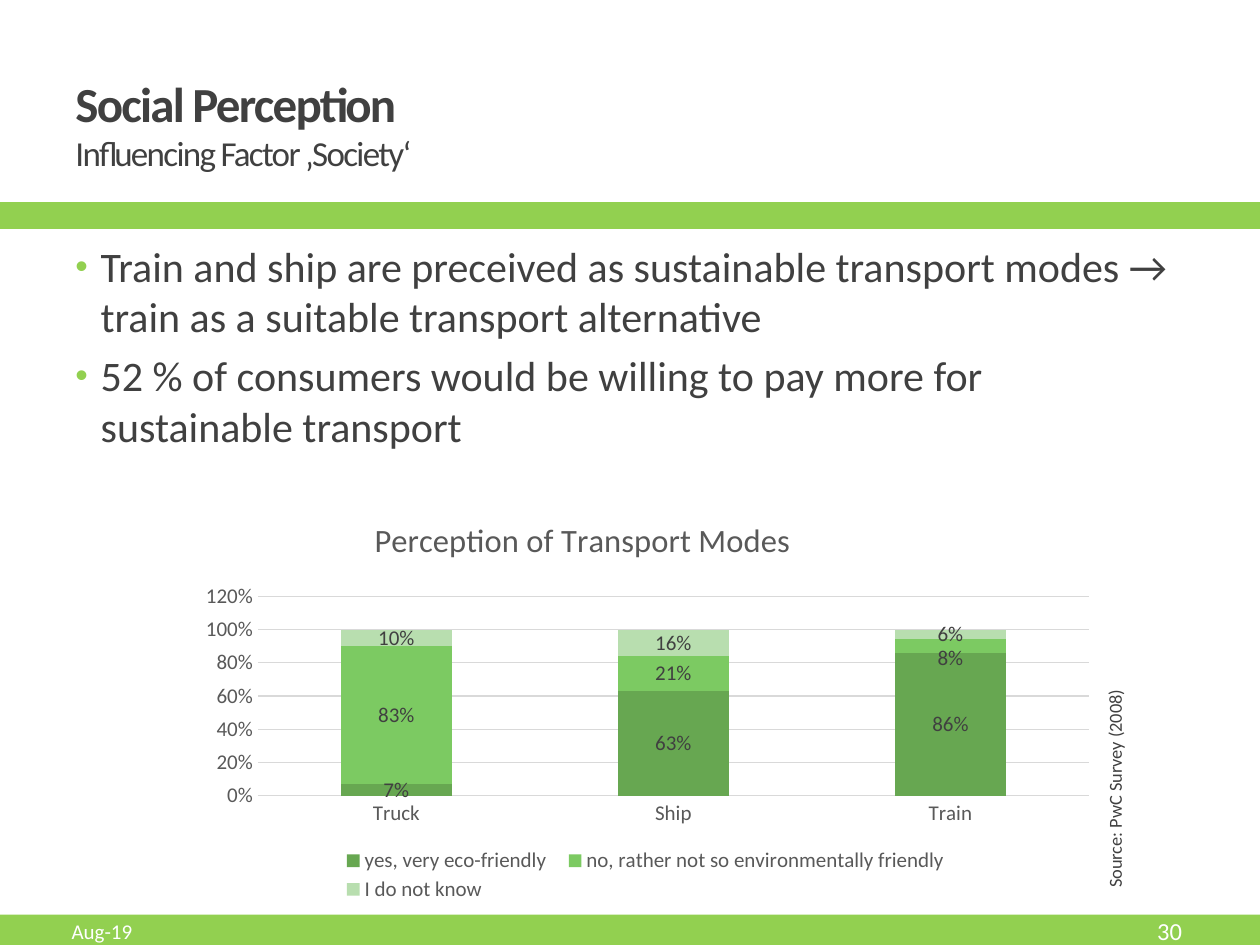
"""Build the Social Perception slide with its bullets and stacked column chart."""
import pptx
import pptx.chart.data
import pptx.dml.color
import pptx.enum.chart
import pptx.enum.shapes
import pptx.enum.text
import pptx.oxml
import pptx.oxml.ns
import pptx.util
from lxml import etree

FONT = "Calibri"
HUES = {"band": "92D050", "text": "404040", "soft": "595959", "grid": "D9D9D9", "white": "FFFFFF"}
COLS, ROWS = 100, 75
WIDE, HIGH = pptx.util.Inches(10), pptx.util.Inches(7.5)

BANDS = [((-0.4, 72.6, 101.6, 5), 0), ((0, 16.2, 101.2, 1.8), 2)]
TITLE = "Social Perception"
TOPIC = "Influencing Factor ‚Society‘"
POINTS = [
    "Train and ship are preceived as sustainable transport modes → train as a suitable transport alternative",
    "52 % of consumers would be willing to pay more for sustainable transport",
]
NOTES = [
    ("Aug-19", (4.7, 72.1, 31.7, 3.6), {"size": 12, "hue": "white"}),
    ("30", (83.1, 72.1, 11.7, 3.6), {"size": 14, "hue": "white", "align": "RIGHT"}),
    ("Source: PwC Survey (2008)", (77, 58.6, 22.9, 2.8), {"size": 10.5, "turn": 270}),
]
HEAD = "Perception of Transport Modes"
MODES = ["Truck", "Ship", "Train"]
VIEWS = [
    ("yes, very eco-friendly", "67A751", (0.07, 0.63, 0.86)),
    ("no, rather not so environmentally friendly", "7CCA62", (0.83, 0.21, 0.08)),
    ("I do not know", "B8DEAF", (0.1, 0.16, 0.06)),
]
SHIFT = {"view": 1, "mode": 2, "drop": 0.03}


def color(hue):
    return pptx.dml.color.RGBColor.from_string(HUES.get(hue, hue))


def place(box):
    """Turn grid columns and rows into slide lengths."""
    return [round(part * unit) for part, unit in zip(box, (WIDE / COLS, HIGH / ROWS) * 2)]


def style(font, size, hue="text", bold=False):
    font.name, font.size, font.bold = FONT, pptx.util.Pt(size), bold
    font.color.rgb = color(hue)


def write(slide, text, box, size=24, hue="text", align="LEFT", anchor="MIDDLE", turn=0, bullet=False):
    """Add a text box; each item of text is a paragraph of (words, size, bold) lines."""
    shape = slide.shapes.add_textbox(*place(box))
    shape.rotation = turn
    frame = shape.text_frame
    frame.word_wrap = True
    frame.vertical_anchor = pptx.enum.text.MSO_ANCHOR[anchor]
    for num, lines in enumerate([text] if isinstance(text, str) else text):
        para = frame.add_paragraph() if num else frame.paragraphs[0]
        para.alignment = pptx.enum.text.PP_ALIGN[align]
        if num:
            para.space_before = pptx.util.Pt(4.8)
        if bullet:
            mark(para)
        for row, (words, points, bold) in enumerate([(lines, size, False)] if isinstance(lines, str) else lines):
            if row:
                para.add_line_break()
            run = para.add_run()
            run.text = words
            style(run.font, points, hue, bold)
    return frame


def mark(para):
    """Give a paragraph a green hanging bullet."""
    props = para._p.get_or_add_pPr()
    inset = pptx.util.Inches(0.2)
    props.set("marL", str(inset))
    props.set("indent", str(-inset))
    name = pptx.oxml.ns.qn
    tint = etree.SubElement(props, name("a:buClr"))
    etree.SubElement(tint, name("a:srgbClr"), val=HUES["band"])
    etree.SubElement(props, name("a:buSzPct"), val="85000")
    etree.SubElement(props, name("a:buFont"), typeface="Arial")
    etree.SubElement(props, name("a:buChar"), char="•")


def lay(part, index, inner=False, edge=True, **shares):
    """Fix where a chart part sits, or how far it moves, as shares of the chart."""
    name = pptx.oxml.ns.qn
    for old in part.findall(name("c:layout")):
        part.remove(old)
    node = pptx.oxml.parse_xml(f"<c:layout {pptx.oxml.ns.nsdecls('c')}><c:manualLayout/></c:layout>")
    part.insert(index, node)
    if inner:
        etree.SubElement(node[0], name("c:layoutTarget"), val="inner")
    for key in "xy" if edge else "":
        etree.SubElement(node[0], name(f"c:{key}Mode"), val="edge")
    for key, share in shares.items():
        etree.SubElement(node[0], name(f"c:{key}"), val=str(share))


def lower(plot, view, mode, drop):
    """Move one data label down, clear of the label above it."""
    label = plot.series[view].points[mode].data_label
    label.position = pptx.enum.chart.XL_LABEL_POSITION.CENTER
    style(label.font, 12)
    node = label._dLbl
    lay(node, 1, edge=False, x=0, y=drop)
    form = etree.Element(pptx.oxml.ns.qn("c:numFmt"), formatCode="0%", sourceLinked="0")
    node.insert(2, form)


def draw(slide, box):
    """Add the stacked column chart."""
    kinds = pptx.enum.chart
    data = pptx.chart.data.CategoryChartData(number_format="0%")
    data.categories = MODES
    for name, _, vals in VIEWS:
        data.add_series(name, vals)
    chart = slide.shapes.add_chart(kinds.XL_CHART_TYPE.COLUMN_STACKED, *place(box), data).chart
    style(chart.font, 12, "soft")

    chart.has_title = True
    title = chart.chart_title.text_frame
    title.text = HEAD
    style(title.paragraphs[0].runs[0].font, 18.6, "soft")

    chart.has_legend = True
    chart.legend.position = kinds.XL_LEGEND_POSITION.BOTTOM
    chart.legend.include_in_layout = False
    style(chart.legend.font, 12, "soft")

    plot = chart.plots[0]
    plot.gap_width, plot.overlap, plot.vary_by_categories = 150, 100, False
    for series, (_, hue, _) in zip(plot.series, VIEWS):
        series.format.fill.solid()
        series.format.fill.fore_color.rgb = color(hue)
        labels = series.data_labels
        labels.show_value = True
        labels.number_format, labels.number_format_is_linked = "0%", False
        style(labels.font, 12)
    lower(plot, **SHIFT)

    cats, vals = chart.category_axis, chart.value_axis
    for axis in (cats, vals):
        axis.major_tick_mark = axis.minor_tick_mark = kinds.XL_TICK_MARK.NONE
        style(axis.tick_labels.font, 12, "soft")
    vals.minimum_scale, vals.maximum_scale, vals.major_unit = 0, 1.2, 0.2
    vals.tick_labels.number_format, vals.tick_labels.number_format_is_linked = "0%", False
    vals.format.line.fill.background()
    for rule in (cats.format.line, vals.major_gridlines.format.line):
        rule.width, rule.color.rgb = pptx.util.Pt(0.75), color("grid")

    lay(chart.chart_title._element, 1, x=0.2, y=0.02)
    lay(chart.legend._element, 1, x=0.16, y=0.84, w=0.68, h=0.15)
    lay(chart._chartSpace.chart.plotArea, 0, inner=True, x=0.08, y=0.23, w=0.9, h=0.49)


def main():
    deck = pptx.Presentation()
    deck.slide_width, deck.slide_height = WIDE, HIGH
    slide = deck.slides.add_slide(deck.slide_layouts[6])
    for box, edge in BANDS:
        band = slide.shapes.add_shape(pptx.enum.shapes.MSO_SHAPE.RECTANGLE, *place(box))
        band.shadow.inherit = False
        band.fill.solid()
        band.fill.fore_color.rgb = color("band")
        if edge:
            band.line.color.rgb, band.line.width = color("band"), pptx.util.Pt(edge)
        else:
            band.line.fill.background()
    head = write(slide, [[(TITLE, 28, True), (TOPIC, 20, False)]], (5, 4.4, 52.1, 10.8))
    for run in head.paragraphs[0].runs:
        run._r.get_or_add_rPr().set("spc", "-100")
    write(slide, POINTS, (5, 18.6, 89.5, 52.2), anchor="TOP", bullet=True)
    draw(slide, (14.6, 39.9, 73.3, 32.3))
    for text, box, form in NOTES:
        write(slide, text, box, **form)
    deck.save("out.pptx")


if __name__ == "__main__":
    main()
